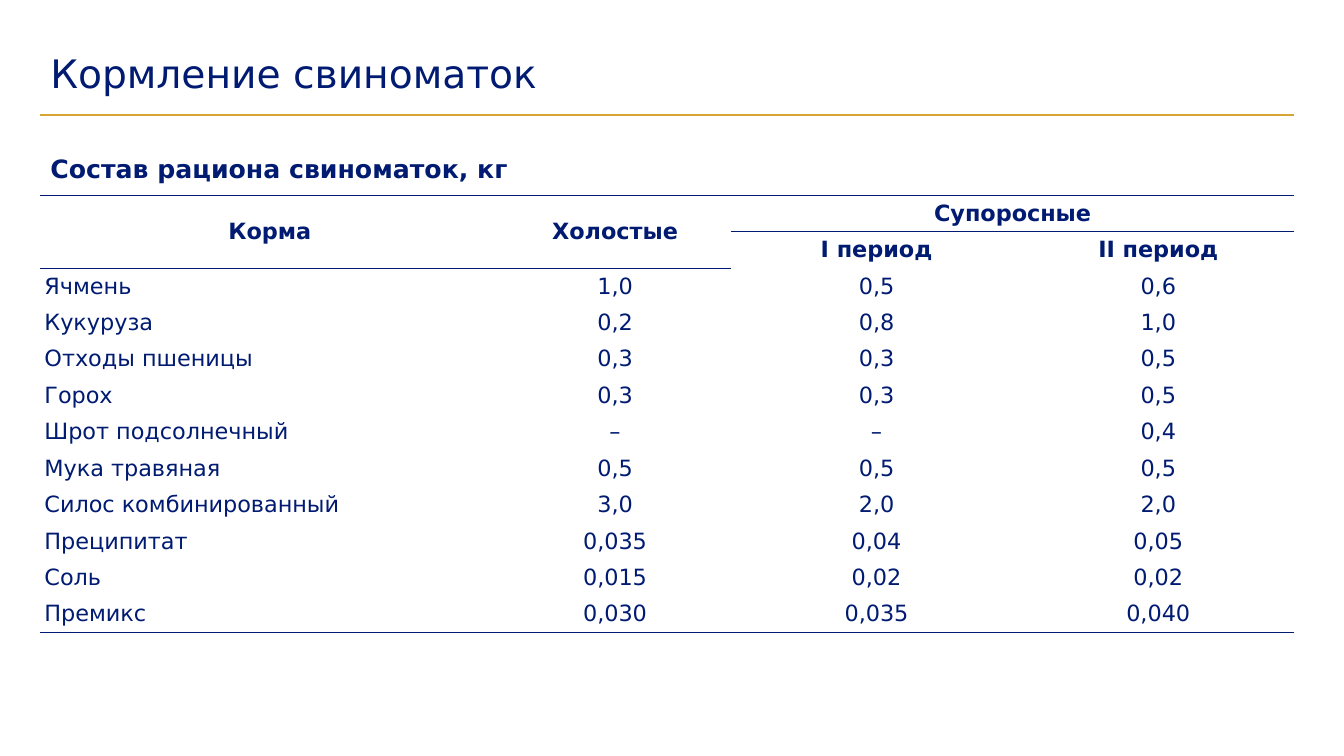
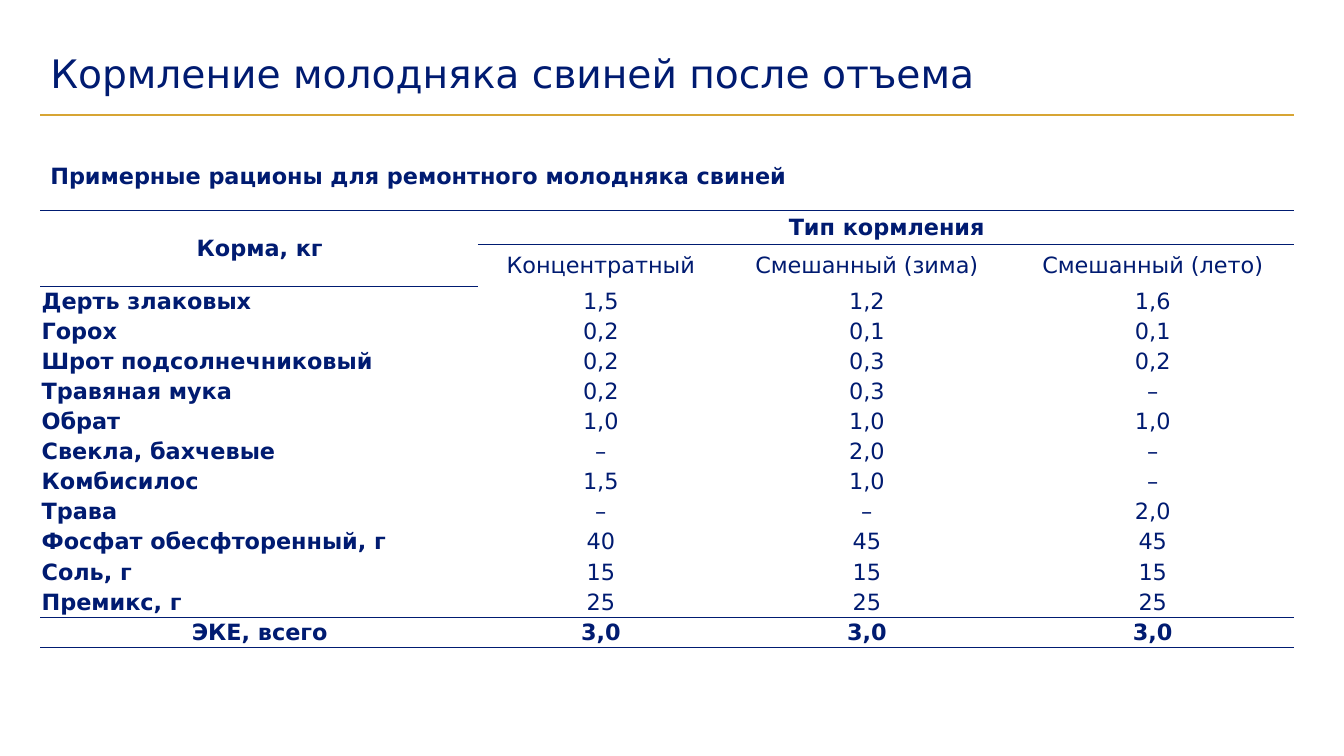
from dataclasses import dataclass

from lxml import etree
from pptx import Presentation
from pptx.dml.color import RGBColor
from pptx.enum.shapes import MSO_CONNECTOR
from pptx.enum.text import MSO_ANCHOR, PP_ALIGN
from pptx.oxml.ns import qn
from pptx.util import Cm, Pt

STRAIGHT = MSO_CONNECTOR.STRAIGHT
MIDDLE, TOP = MSO_ANCHOR.MIDDLE, MSO_ANCHOR.TOP
LEFT, CENTER = PP_ALIGN.LEFT, PP_ALIGN.CENTER
PLAIN_TABLE_STYLE = "{2D5ABB26-0587-4C30-8999-92F81FD0307C}"


@dataclass(frozen=True)
class Theme:
    font: str = "DejaVu Sans"
    ink: str = "001B71"
    accent: str = "D7A534"
    title_size: int = 28
    caption_size: int = 18
    body_size: int = 16
    rule_width: int = 1


@dataclass(frozen=True)
class Box:
    left: float
    top: float
    width: float
    height: float

    def lengths(self):
        return Cm(self.left), Cm(self.top), Cm(self.width), Cm(self.height)


@dataclass(frozen=True)
class Header:
    row: int
    column: int
    text: str
    row_span: int = 1
    column_span: int = 1
    bold: bool = True
    ruled: bool = False


@dataclass(frozen=True)
class RationTable:
    box: Box
    column_widths: list
    row_heights: list
    side_margins: tuple
    vertical_margin: float
    headers: list
    rows: list
    bold_names: bool = False
    has_total: bool = False


THEME = Theme()
TITLE_BOX = Box(1.02, 1.14, 31.6, 1.52)
RULE_TOP = 2.9
HEADER_ROWS = 2

SOW_RATION = RationTable(
    box=Box(1.02, 4.92, 31.6, 10.88),
    column_widths=[11.56, 5.84, 7.34, 6.86],
    row_heights=[10.88 / 12] * 12,
    side_margins=(0.1, 0.1),
    vertical_margin=0.12,
    headers=[
        Header(0, 0, "Корма", row_span=2, ruled=True),
        Header(0, 1, "Холостые", row_span=2, ruled=True),
        Header(0, 2, "Супоросные", column_span=2, ruled=True),
        Header(1, 2, "I период"),
        Header(1, 3, "II период"),
    ],
    rows=[
        ("Ячмень", "1,0", "0,5", "0,6"),
        ("Кукуруза", "0,2", "0,8", "1,0"),
        ("Отходы пшеницы", "0,3", "0,3", "0,5"),
        ("Горох", "0,3", "0,3", "0,5"),
        ("Шрот подсолнечный", "–", "–", "0,4"),
        ("Мука травяная", "0,5", "0,5", "0,5"),
        ("Силос комбинированный", "3,0", "2,0", "2,0"),
        ("Преципитат", "0,035", "0,04", "0,05"),
        ("Соль", "0,015", "0,02", "0,02"),
        ("Премикс", "0,030", "0,035", "0,040"),
    ],
)

YOUNG_PIG_RATION = RationTable(
    box=Box(1.02, 5.3, 31.6, 10.92),
    column_widths=[11.02, 6.17, 7.24, 7.17],
    row_heights=[0.86, 1.06] + [0.75] * 12,
    side_margins=(0.03, 0),
    vertical_margin=0.04,
    headers=[
        Header(0, 0, "Корма, кг", row_span=2, ruled=True),
        Header(0, 1, "Тип кормления", column_span=3, ruled=True),
        Header(1, 1, "Концентратный", bold=False),
        Header(1, 2, "Смешанный (зима)", bold=False),
        Header(1, 3, "Смешанный (лето)", bold=False),
    ],
    rows=[
        ("Дерть злаковых", "1,5", "1,2", "1,6"),
        ("Горох", "0,2", "0,1", "0,1"),
        ("Шрот подсолнечниковый", "0,2", "0,3", "0,2"),
        ("Травяная мука", "0,2", "0,3", "–"),
        ("Обрат", "1,0", "1,0", "1,0"),
        ("Свекла, бахчевые", "–", "2,0", "–"),
        ("Комбисилос", "1,5", "1,0", "–"),
        ("Трава", "–", "–", "2,0"),
        ("Фосфат обесфторенный, г", "40", "45", "45"),
        ("Соль, г", "15", "15", "15"),
        ("Премикс, г", "25", "25", "25"),
        ("ЭКЕ, всего", "3,0", "3,0", "3,0"),
    ],
    bold_names=True,
    has_total=True,
)


def write_text(text_frame, text, size, bold=False, alignment=LEFT):
    paragraph = text_frame.paragraphs[0]
    paragraph.alignment = alignment
    run = paragraph.add_run()
    run.text = text
    run.font.name = THEME.font
    run.font.size = Pt(size)
    run.font.bold = bold
    run.font.color.rgb = RGBColor.from_string(THEME.ink)
    return paragraph


def add_text(slide, box, text, size, bold=False, anchor=TOP):
    text_frame = slide.shapes.add_textbox(*box.lengths()).text_frame
    text_frame.word_wrap = True
    text_frame.vertical_anchor = anchor
    return write_text(text_frame, text, size, bold)


def add_title(slide, box, text):
    paragraph = add_text(slide, box, text, THEME.title_size, anchor=MIDDLE)
    paragraph.line_spacing = 0.9
    # Rule under the title
    right = box.left + box.width
    rule = slide.shapes.add_connector(
        STRAIGHT, Cm(box.left), Cm(RULE_TOP), Cm(right), Cm(RULE_TOP))
    rule.line.color.rgb = RGBColor.from_string(THEME.accent)
    rule.line.width = Pt(THEME.rule_width)
    etree.SubElement(rule._element.spPr, qn("a:effectLst"))


def set_borders(cell, ruled_sides):
    properties = cell._tc.get_or_add_tcPr()
    for side in "LRTB":
        line = etree.SubElement(properties, qn(f"a:ln{side}"))
        if side in ruled_sides:
            line.set("w", str(Pt(THEME.rule_width)))
            fill = etree.SubElement(line, qn("a:solidFill"))
            etree.SubElement(fill, qn("a:srgbClr")).set("val", THEME.ink)
        else:
            etree.SubElement(line, qn("a:noFill"))


def header_borders(headers):
    borders = {}
    for header in headers:
        if not header.ruled:
            continue
        last_row = header.row + header.row_span - 1
        for row in range(header.row, last_row + 1):
            for column in range(header.column, header.column + header.column_span):
                top = "T" if row == header.row else ""
                borders[row, column] = top + ("B" if row == last_row else "")
        borders[header.row, header.column] = "TB"
    return borders


def add_ration_table(slide, ration):
    row_count, column_count = len(ration.row_heights), len(ration.column_widths)
    frame = slide.shapes.add_table(row_count, column_count, *ration.box.lengths())
    table = frame.table
    table.first_row = table.horz_banding = False
    table._tbl.tblPr.find(qn("a:tableStyleId")).text = PLAIN_TABLE_STYLE
    for column, width in zip(table.columns, ration.column_widths):
        column.width = Cm(width)
    for row, height in zip(table.rows, ration.row_heights):
        row.height = Cm(height)

    # Cell format and horizontal rules
    borders = header_borders(ration.headers)
    last_row = row_count - 1
    for column in range(column_count):
        borders[last_row, column] = "TB" if ration.has_total else "B"
    for row in range(row_count):
        for column in range(column_count):
            cell = table.cell(row, column)
            set_borders(cell, borders.get((row, column), ""))
            cell.fill.background()
            cell.vertical_anchor = MIDDLE
            cell.margin_left, cell.margin_right = map(Cm, ration.side_margins)
            cell.margin_top = cell.margin_bottom = Cm(ration.vertical_margin)
            cell.text_frame.paragraphs[0].font.size = Pt(THEME.body_size)

    # Header cells
    for header in ration.headers:
        cell = table.cell(header.row, header.column)
        if header.row_span > 1 or header.column_span > 1:
            cell.merge(table.cell(header.row + header.row_span - 1,
                                  header.column + header.column_span - 1))
        write_text(cell.text_frame, header.text, THEME.body_size, header.bold, CENTER)

    # Feeds and amounts
    for row, values in enumerate(ration.rows, start=HEADER_ROWS):
        is_total = ration.has_total and row == last_row
        for column, value in enumerate(values):
            is_name = column == 0
            bold = is_total or (is_name and ration.bold_names)
            alignment = LEFT if is_name and not is_total else CENTER
            write_text(table.cell(row, column).text_frame, value,
                       THEME.body_size, bold, alignment)


def add_ration_slide(presentation, title, caption, caption_box, caption_size, ration):
    slide = presentation.slides.add_slide(presentation.slide_layouts[6])
    add_title(slide, TITLE_BOX, title)
    add_ration_table(slide, ration)
    add_text(slide, caption_box, caption, caption_size, bold=True)


def main():
    presentation = Presentation()
    presentation.slide_width = Cm(33.87)
    presentation.slide_height = Cm(19.05)
    add_ration_slide(
        presentation, "Кормление свиноматок", "Состав рациона свиноматок, кг",
        Box(1.02, 3.73, 25.27, 1.02), THEME.caption_size, SOW_RATION)
    add_ration_slide(
        presentation, "Кормление молодняка свиней после отъема",
        "Примерные рационы для ремонтного молодняка свиней",
        Box(1.02, 3.96, 26.47, 0.94), THEME.body_size, YOUNG_PIG_RATION)
    presentation.save("out.pptx")


if __name__ == "__main__":
    main()
